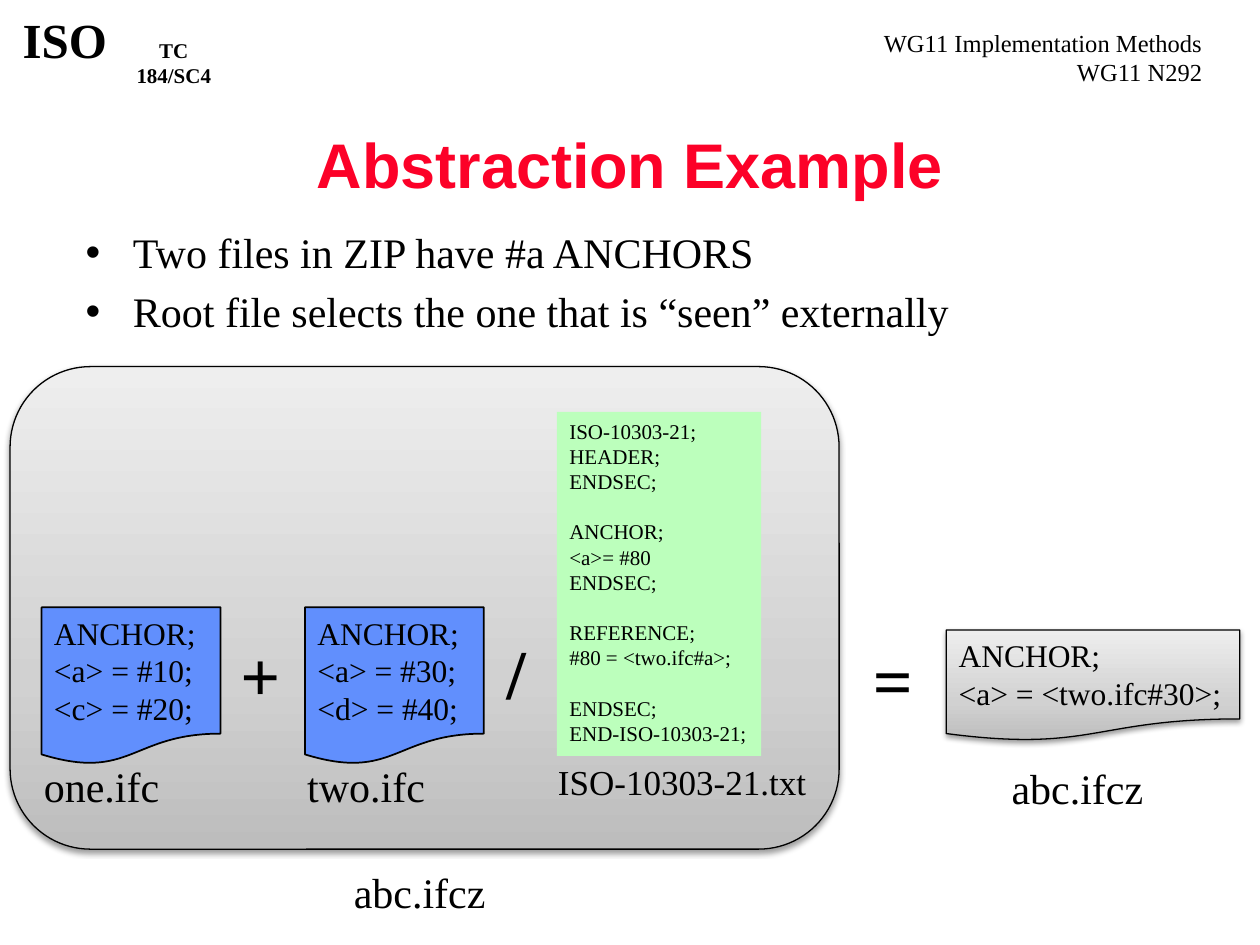
from collections import namedtuple
from copy import deepcopy

from lxml.etree import SubElement
from pptx import Presentation
from pptx.dml.color import RGBColor
from pptx.enum.shapes import MSO_SHAPE
from pptx.enum.text import MSO_ANCHOR, PP_ALIGN
from pptx.oxml.ns import qn
from pptx.util import Inches, Pt

BLACK = RGBColor(0x00, 0x00, 0x00)
RED = RGBColor(0xFC, 0x01, 0x28)
BLUE = RGBColor(0x61, 0x8F, 0xFD)
GREEN = RGBColor(0xBC, 0xFF, 0xBC)
GREY_STOPS = [
    (0, RGBColor(0xBD, 0xBD, 0xBD)),
    (0.35, RGBColor(0xD1, 0xD1, 0xD1)),
    (1, RGBColor(0xEE, 0xEE, 0xEE)),
]
SERIF = "Times New Roman"
SANS = "Arial"

Box = namedtuple("Box", "left top width height")

# Each section is set off from the one before it by the space of one line.
ROOT_FILE_SECTIONS = [
    ["ISO-10303-21;", "HEADER;", "ENDSEC;"],
    ["ANCHOR;", "<a>= #80", "ENDSEC;"],
    ["REFERENCE;", "#80 = <two.ifc#a>;"],
    ["ENDSEC;", "END-ISO-10303-21;"],
]
DATA_FILES = [
    ("one.ifc", ["ANCHOR;", "<a> = #10;", "<c> = #20;"]),
    ("two.ifc", ["ANCHOR;", "<a> = #30;", "<d> = #40;"]),
]


def inside(box, left, top, width, height):
    """Return a box given by its offset from the corner of another."""
    return Box(box.left + left, box.top + top, width, height)


def move(shape, box):
    shape.left, shape.top = Inches(box.left), Inches(box.top)
    shape.width, shape.height = Inches(box.width), Inches(box.height)


def write(frame, lines, size, bold=False, align=PP_ALIGN.LEFT, color=BLACK, font=SERIF):
    for index, line in enumerate(lines):
        paragraph = frame.add_paragraph() if index else frame.paragraphs[0]
        paragraph.alignment = align
        run = paragraph.add_run()
        run.text = line
        run.font.name = font
        run.font.size = Pt(size)
        run.font.bold = bold
        run.font.color.rgb = color


def add_text(slide, box, lines, size, wrap=False, **style):
    shape = slide.shapes.add_textbox(*(Inches(value) for value in box))
    shape.text_frame.word_wrap = wrap
    write(shape.text_frame, lines, size, **style)


def add_panel(slide, kind, box, line_width=0):
    shape = slide.shapes.add_shape(kind, *(Inches(value) for value in box))
    shape.shadow.inherit = False
    shape.text_frame.vertical_anchor = MSO_ANCHOR.TOP
    if line_width:
        shape.line.color.rgb = BLACK
        shape.line.width = Pt(line_width)
    else:
        shape.line.fill.background()
    return shape


def fill_solid(shape, color):
    shape.fill.solid()
    shape.fill.fore_color.rgb = color


def shade_grey(shape):
    """Give the shape a grey gradient and a soft shadow below it."""
    shape.fill.gradient()
    shape.fill.gradient_angle = 90
    stop_list = shape.element.spPr.find(qn("a:gradFill")).find(qn("a:gsLst"))
    stop_list.insert(1, deepcopy(stop_list[0]))
    for stop, (position, color) in zip(shape.fill.gradient_stops, GREY_STOPS):
        stop.position = position
        stop.color.rgb = color

    effects = shape.element.spPr.find(qn("a:effectLst"))
    shadow = SubElement(effects, qn("a:outerShdw"), blurRad="40000", dist="20000",
                        dir="5400000", rotWithShape="0")
    shadow_color = SubElement(shadow, qn("a:srgbClr"), val=str(BLACK))
    SubElement(shadow_color, qn("a:alpha"), val="38000")


def add_page_header(slide, box):
    add_text(slide, inside(box, 0, 0, 0.97, 0.56), ["ISO"], 28,
             wrap=True, bold=True, align=PP_ALIGN.CENTER)
    add_text(slide, inside(box, 0.85, 0.22, 1, 0.5), ["TC 184/SC4"], 12,
             wrap=True, bold=True, align=PP_ALIGN.CENTER)
    add_text(slide, inside(box, box.width - 3.31, 0.14, 3.31, 0.81),
             ["WG11 Implementation Methods", "WG11 N292"], 14,
             wrap=True, align=PP_ALIGN.RIGHT)


def fill_title(slide, box):
    title = slide.shapes.title
    move(title, box)
    title.text_frame.vertical_anchor = MSO_ANCHOR.MIDDLE
    write(title.text_frame, ["Abstraction Example"], 36, bold=True,
          align=PP_ALIGN.CENTER, color=RED, font=SANS)


def fill_list(slide, box):
    body = slide.placeholders[1]
    move(body, box)
    write(body.text_frame, [
        "Two files in ZIP have #a ANCHORS",
        "Root file selects the one that is “seen” externally",
    ], 24)


def add_data_file(slide, box, name, lines):
    document = add_panel(slide, MSO_SHAPE.FLOWCHART_DOCUMENT, box, 1)
    fill_solid(document, BLUE)
    write(document.text_frame, lines, 18)
    add_text(slide, inside(box, -0.08, 1.17, 1.14, 0.5), [name], 24)


def add_root_file(slide, box):
    page = add_panel(slide, MSO_SHAPE.RECTANGLE, box)
    fill_solid(page, GREEN)
    frame = page.text_frame
    frame.word_wrap = False
    write(frame, [line for section in ROOT_FILE_SECTIONS for line in section], 12)
    start = 0
    for section in ROOT_FILE_SECTIONS[:-1]:
        start += len(section)
        frame.paragraphs[start].space_before = Pt(14.4)
    add_text(slide, inside(box, -0.09, 2.72, 2.19, 0.44), ["ISO-10303-21.txt"], 20)


def add_archive(slide, box):
    shade_grey(add_panel(slide, MSO_SHAPE.ROUNDED_RECTANGLE, box, 0.75))
    for index, (name, lines) in enumerate(DATA_FILES):
        file_box = inside(box, 0.25 + 2.09 * index, 1.91, 1.42, 1.25)
        add_data_file(slide, file_box, name, lines)
    add_root_file(slide, inside(box, 4.34, 0.36, 1.62, 2.73))
    add_text(slide, inside(box, 1.73, 2.05, 0.52, 0.77), ["+"], 40, bold=True)
    add_text(slide, inside(box, 3.84, 2.04, 0.36, 0.77), ["/"], 40, bold=True)
    add_text(slide, inside(box, 2.63, 3.92, 1.26, 0.5), ["abc.ifcz"], 24)


def add_result(slide, box):
    add_text(slide, inside(box, 0, 0, 0.6, 0.77), ["="], 40, bold=True)
    document = add_panel(slide, MSO_SHAPE.FLOWCHART_DOCUMENT,
                         inside(box, 0.68, 0, box.width - 0.68, 0.88), 0.75)
    shade_grey(document)
    write(document.text_frame, ["ANCHOR;", "<a> = <two.ifc#30>;"], 18)
    add_text(slide, inside(box, 1.1, 1, 1.26, 0.5), ["abc.ifcz"], 24)


def main():
    presentation = Presentation()
    presentation.slide_width = Inches(10)
    presentation.slide_height = Inches(7.5)
    slide = presentation.slides.add_slide(presentation.slide_layouts[1])
    add_page_header(slide, Box(0.03, 0.03, 9.61, 0.95))
    fill_title(slide, Box(0.75, 0.67, 8.5, 1.25))
    fill_list(slide, Box(0.58, 1.75, 8.5, 4.5))
    add_archive(slide, Box(0.08, 2.91, 6.58, 3.83))
    add_result(slide, Box(6.83, 5, 3.01, 1.5))
    presentation.save("out.pptx")


if __name__ == "__main__":
    main()
